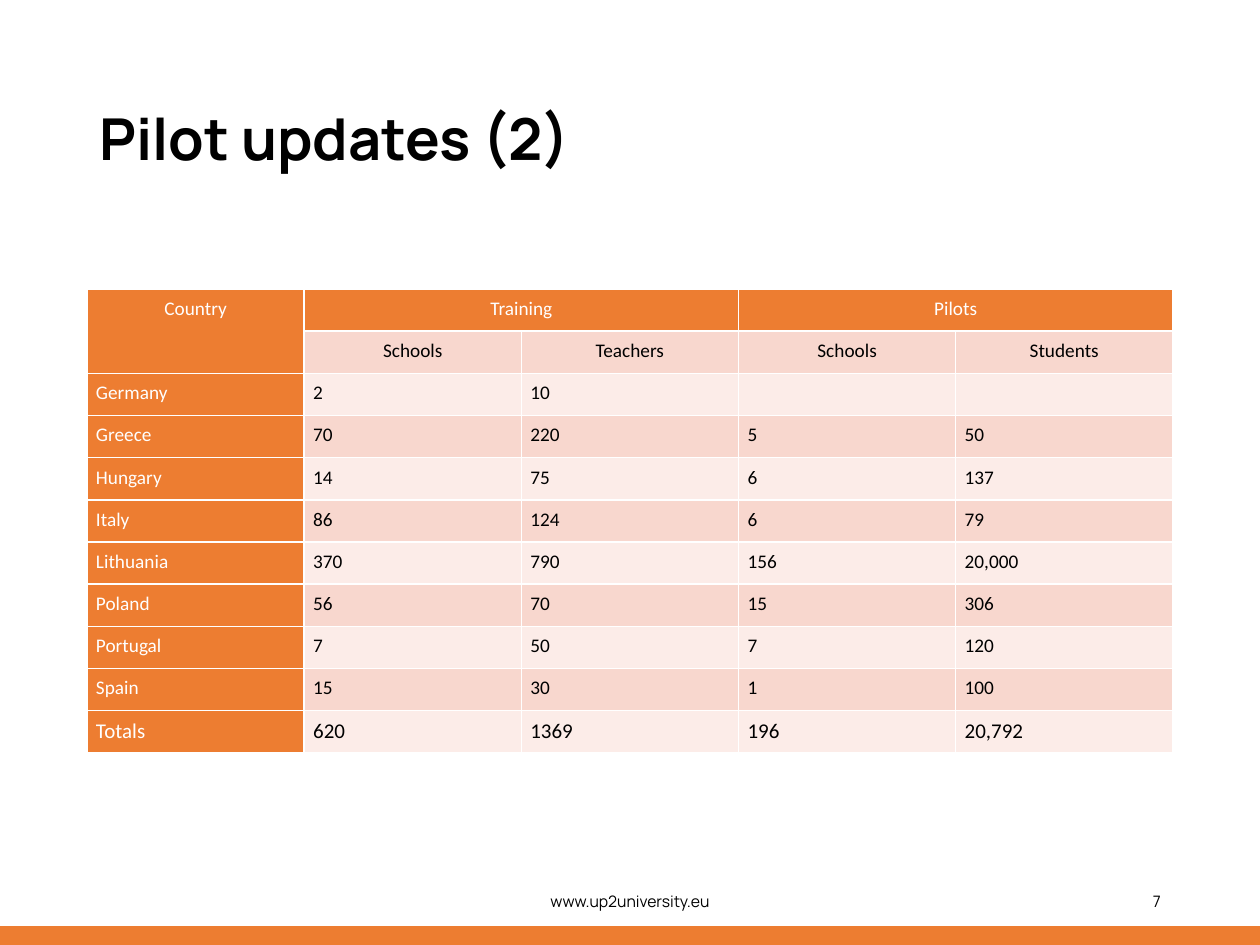
from dataclasses import dataclass

from pptx import Presentation
from pptx.dml.color import RGBColor
from pptx.enum.shapes import MSO_SHAPE
from pptx.enum.text import MSO_ANCHOR, MSO_AUTO_SIZE, PP_ALIGN
from pptx.oxml.ns import qn
from pptx.util import Emu, Pt
from lxml.etree import SubElement


@dataclass(frozen=True)
class Theme:
    orange: str = "ED7D31"
    dark_band: str = "F8D7CE"
    light_band: str = "FCECE8"
    white: str = "FFFFFF"
    black: str = "000000"
    heading_font: str = "Manrope"
    table_font: str = "Calibri"
    title_size: int = 33
    table_size: int = 11
    totals_size: int = 12
    footer_size: int = 9


THEME = Theme()
PX_PER_INCH = 126

GROUPS = ["Country", "Training", "", "Pilots", ""]
MEASURES = ["", "Schools", "Teachers", "Schools", "Students"]
COUNTRIES = [
    ["Germany", "2", "10", "", ""],
    ["Greece", "70", "220", "5", "50"],
    ["Hungary", "14", "75", "6", "137"],
    ["Italy", "86", "124", "6", "79"],
    ["Lithuania", "370", "790", "156", "20,000"],
    ["Poland", "56", "70", "15", "306"],
    ["Portugal", "7", "50", "7", "120"],
    ["Spain", "15", "30", "1", "100"],
]
TOTALS = ["Totals", "620", "1369", "196", "20,792"]


def px(length):
    return Emu(round(length * 914400 / PX_PER_INCH))


def style_font(font, name, size, color, bold=False):
    font.name = name
    font.size = Pt(size)
    font.bold = bold
    font.color.rgb = RGBColor.from_string(color)


def add_title(slide, box, text):
    title = slide.shapes.title
    title.left, title.top, title.width, title.height = map(px, box)
    frame = title.text_frame
    frame.text = text
    frame.word_wrap = True
    frame.auto_size = MSO_AUTO_SIZE.NONE
    frame.vertical_anchor = MSO_ANCHOR.MIDDLE
    paragraph = frame.paragraphs[0]
    paragraph.alignment = PP_ALIGN.LEFT
    paragraph.line_spacing = 0.9
    style_font(paragraph.font, THEME.heading_font, THEME.title_size, THEME.black, True)


def add_borders(cell, color, width):
    properties = cell._tc.get_or_add_tcPr()
    for position, side in enumerate(("lnL", "lnR", "lnT", "lnB")):
        line = properties.makeelement(qn(f"a:{side}"), {"w": str(Pt(width))})
        fill = SubElement(line, qn("a:solidFill"))
        SubElement(fill, qn("a:srgbClr"), val=color)
        properties.insert(position, line)


def fill_cell(cell, text, fill, color, size, alignment):
    cell.fill.solid()
    cell.fill.fore_color.rgb = RGBColor.from_string(fill)
    cell.margin_left = cell.margin_right = px(9)
    cell.margin_top = cell.margin_bottom = px(8)
    add_borders(cell, THEME.white, 1)
    cell.text = text
    paragraph = cell.text_frame.paragraphs[0]
    paragraph.alignment = alignment
    style_font(paragraph.font, THEME.table_font, size, color)
    if not text:
        # An empty cell keeps the row height through its end mark
        paragraph._p.get_or_add_endParaRPr().set("sz", str(size * 100))


def add_pilot_table(slide, box):
    rows = [GROUPS, MEASURES, *COUNTRIES, TOTALS]
    left, top, width, height = map(px, box)
    table = slide.shapes.add_table(
        len(rows), len(GROUPS), left, top, width, height).table
    for column in table.columns:
        column.width = width // len(GROUPS)
    for row in table.rows:
        row.height = height // len(rows)

    for row_index, values in enumerate(rows):
        band = THEME.dark_band if row_index % 2 else THEME.light_band
        size = THEME.totals_size if values is TOTALS else THEME.table_size
        alignment = PP_ALIGN.CENTER if row_index < 2 else PP_ALIGN.JUSTIFY
        for column_index, text in enumerate(values):
            is_header = row_index == 0 or column_index == 0
            fill_cell(
                table.cell(row_index, column_index), text,
                THEME.orange if is_header else band,
                THEME.white if is_header else THEME.black,
                size, alignment)

    # Country spans both header rows; each group spans two measures
    table.cell(0, 0).merge(table.cell(1, 0))
    for column_index in (1, 3):
        table.cell(0, column_index).merge(table.cell(0, column_index + 1))


def add_footer_text(slide, box, text, alignment):
    frame = slide.shapes.add_textbox(*map(px, box)).text_frame
    frame.text = text
    frame.word_wrap = True
    frame.vertical_anchor = MSO_ANCHOR.MIDDLE
    paragraph = frame.paragraphs[0]
    paragraph.alignment = alignment
    style_font(paragraph.font, THEME.heading_font, THEME.footer_size, THEME.black)


def add_footer(slide, box):
    left, top, width, height = box
    bar_height, text_height = 19, 50
    # Orange bar along the bottom edge
    bar = slide.shapes.add_shape(
        MSO_SHAPE.RECTANGLE,
        *map(px, (left, top + height - bar_height, width, bar_height)))
    bar.shadow.inherit = False
    bar.fill.solid()
    bar.fill.fore_color.rgb = RGBColor.from_string(THEME.orange)
    bar.line.fill.background()
    # Web address and page number
    add_footer_text(slide, (left + 417, top, 426, text_height),
                    "www.up2university.eu", PP_ALIGN.CENTER)
    add_footer_text(slide, (left + 890, top, 283, text_height), "7", PP_ALIGN.RIGHT)


def main():
    presentation = Presentation()
    presentation.slide_width = px(1260)
    presentation.slide_height = px(945)
    slide = presentation.slides.add_slide(presentation.slide_layouts[5])
    add_title(slide, (87, 50, 953, 183), "Pilot updates (2)")
    add_pilot_table(slide, (87, 289, 1086, 464))
    add_footer(slide, (0, 876, 1260, 69))
    presentation.save("out.pptx")


if __name__ == "__main__":
    main()
